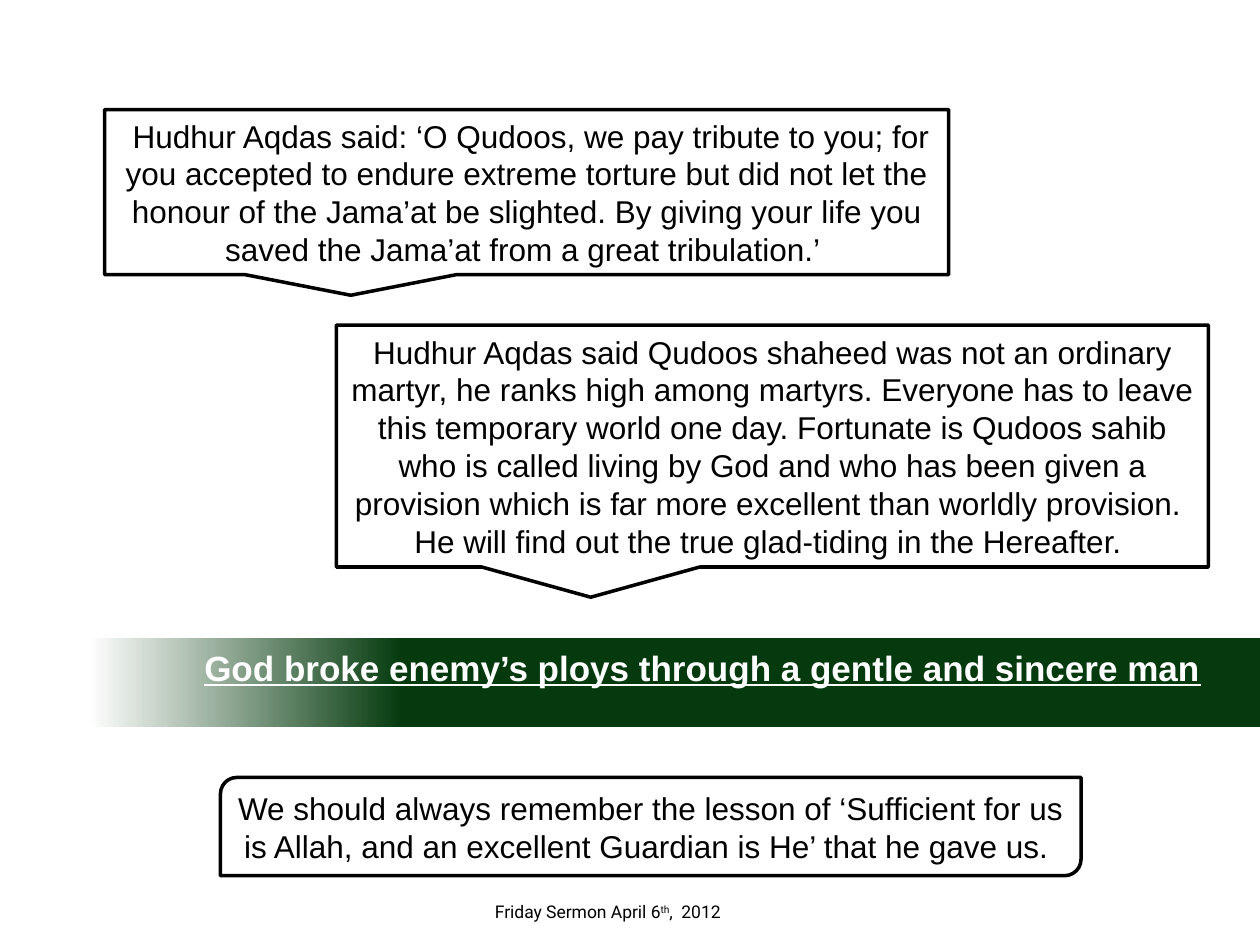
from dataclasses import dataclass

from pptx import Presentation
from pptx.dml.color import RGBColor
from pptx.enum.shapes import MSO_SHAPE
from pptx.enum.text import MSO_ANCHOR, MSO_AUTO_SIZE, PP_ALIGN
from pptx.util import Inches, Pt

BAND = MSO_SHAPE.RECTANGLE
CALLOUT = MSO_SHAPE.RECTANGULAR_CALLOUT
LESSON = MSO_SHAPE.ROUND_2_DIAG_RECTANGLE
TOP, MIDDLE = MSO_ANCHOR.TOP, MSO_ANCHOR.MIDDLE
CENTER, RIGHT = PP_ALIGN.CENTER, PP_ALIGN.RIGHT
FIXED, GROW = MSO_AUTO_SIZE.NONE, MSO_AUTO_SIZE.SHAPE_TO_FIT_TEXT


@dataclass(frozen=True)
class Theme:
    """Colours, fonts and sizes of the slide."""
    ink: RGBColor = RGBColor(0, 0, 0)
    paper: RGBColor = RGBColor(255, 255, 255)
    green: RGBColor = RGBColor(0x04, 0x3A, 0x0D)
    font: str = "Arial"
    footer_font: str = "Roboto"
    heading: int = 20
    body: int = 18
    footer: int = 10
    outline: int = 2


THEME = Theme()

STATEMENTS = [
    (CALLOUT, (0.83, 0.87, 6.7, 1.31),
     " Hudhur Aqdas said: ‘O Qudoos, we pay tribute to you; for you accepted "
     "to endure extreme torture but did not let the honour of the Jama’at be "
     "slighted. By giving your life you saved the Jama’at from a great "
     "tribulation.’ "),
    (CALLOUT, (2.67, 2.58, 6.92, 1.92),
     "Hudhur Aqdas said Qudoos shaheed was not an ordinary martyr, he ranks "
     "high among martyrs. Everyone has to leave this temporary world one day. "
     "Fortunate is Qudoos sahib who is called living by God and who has been "
     "given a provision which is far more excellent than worldly provision.  "
     "He will find out the true glad-tiding in the Hereafter. "),
    (LESSON, (1.75, 6.17, 6.83, 0.78),
     "We should always remember the lesson of ‘Sufficient for us is Allah, "
     "and an excellent Guardian is He’ that he gave us. "),
]


def inches(box):
    """Turn a box in inches into lengths."""
    return [Inches(length) for length in box]


def style_run(run, size, color, font=THEME.font):
    """Set the font, size and colour of a run."""
    run.font.name = font
    run.font.size = Pt(size)
    run.font.color.rgb = color


def add_band(slide, box):
    """Add the fading green band behind the heading."""
    band = slide.shapes.add_shape(BAND, *inches(box))
    band.shadow.inherit = False
    band.line.fill.background()
    band.fill.gradient()
    band.fill.gradient_angle = 0
    fade = [(0.07, THEME.paper), (0.32, THEME.green)]
    for stop, (position, color) in zip(band.fill.gradient_stops, fade):
        stop.position = position
        stop.color.rgb = color
    return band


def set_heading(slide, text, box, band):
    """Place the title on the band."""
    heading = slide.shapes.title
    heading.left, heading.top, heading.width, heading.height = inches(box)
    band.element.addnext(heading.element)
    frame = heading.text_frame
    frame.text = text
    frame.auto_size = FIXED
    frame.vertical_anchor = TOP
    frame.margin_left = frame.margin_right = 0
    line = frame.paragraphs[0]
    line.alignment = RIGHT
    line.space_before = Pt(10.8)
    style_run(line.runs[0], THEME.heading, THEME.paper)
    line.runs[0].font.bold = line.runs[0].font.underline = True


def add_statement(slide, outline, box, text):
    """Add an outlined shape with a centred statement."""
    statement = slide.shapes.add_shape(outline, *inches(box))
    statement.shadow.inherit = False
    statement.fill.solid()
    statement.fill.fore_color.rgb = THEME.paper
    statement.line.color.rgb = THEME.ink
    statement.line.width = Pt(THEME.outline)
    frame = statement.text_frame
    frame.text = text
    frame.word_wrap = True
    frame.auto_size = GROW
    frame.vertical_anchor = MIDDLE
    frame.paragraphs[0].alignment = CENTER
    style_run(frame.paragraphs[0].runs[0], THEME.body, THEME.ink)


def add_footer(slide, box, pieces):
    """Add the dated footer from pairs of text and baseline shift."""
    frame = slide.shapes.add_textbox(*inches(box)).text_frame
    frame.word_wrap = False
    frame.auto_size = GROW
    for text, shift in pieces:
        run = frame.paragraphs[0].add_run()
        run.text = text
        style_run(run, THEME.footer, THEME.ink, THEME.footer_font)
        run.font._element.set("baseline", str(shift * 1000))


def main():
    """Build the slide and save it."""
    deck = Presentation()
    deck.slide_width, deck.slide_height = Inches(10), Inches(7.5)
    slide = deck.slides.add_slide(deck.slide_layouts[5])
    band = add_band(slide, (0, 5.06, 10, 0.71))
    set_heading(slide, "God broke enemy’s ploys through a gentle and sincere man",
                (1.25, 5.08, 8.28, 0.62), band)
    for outline, box, text in STATEMENTS:
        add_statement(slide, outline, box, text)
    add_footer(slide, (3.83, 7.1, 3, 0.27),
               [("Friday Sermon April 6", 0), ("th", 30), (",  2012", 0)])
    deck.save("out.pptx")


if __name__ == "__main__":
    main()
